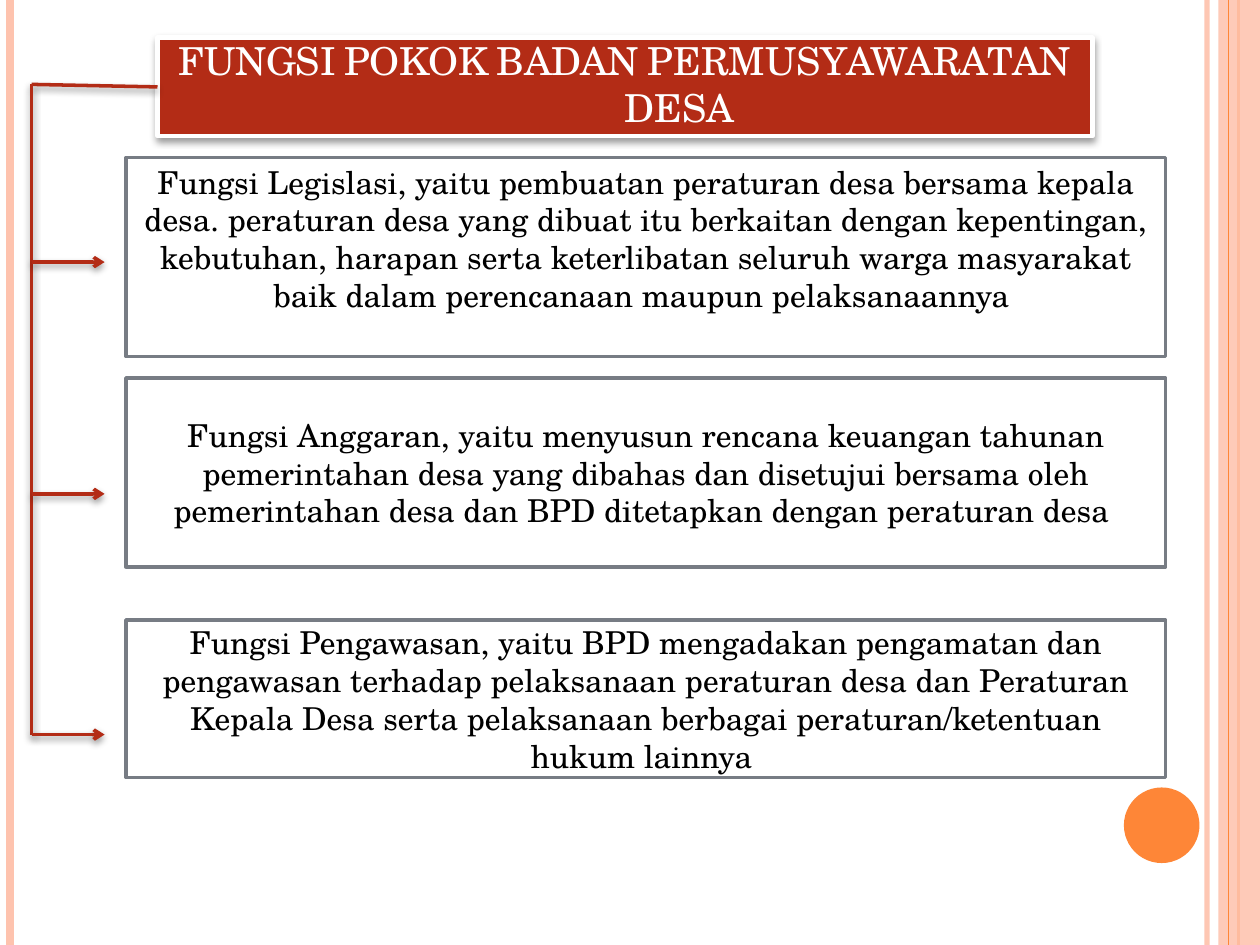
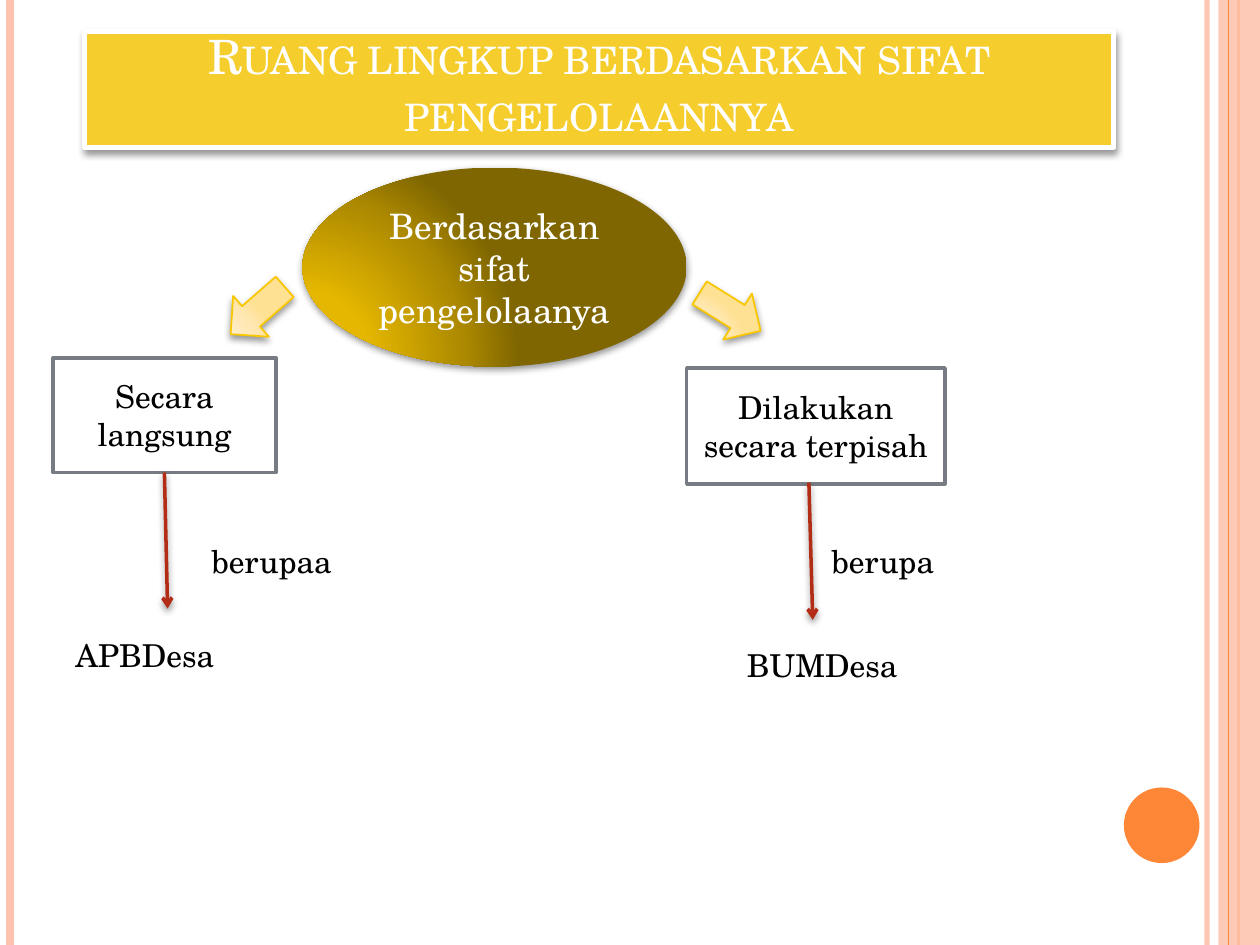
from lxml.etree import SubElement
from pptx import Presentation
from pptx.dml.color import RGBColor
from pptx.enum.shapes import MSO_CONNECTOR, MSO_SHAPE
from pptx.enum.text import MSO_ANCHOR, MSO_AUTO_SIZE, PP_ALIGN
from pptx.oxml.ns import qn
from pptx.util import Emu, Pt

PX = 9144
WIDTH, HEIGHT = 1000, 750
FONT = "TeX Gyre Schola"
WHITE = RGBColor(0xFF, 0xFF, 0xFF)
BLACK = RGBColor(0x00, 0x00, 0x00)
PEACH = RGBColor(0xFE, 0xC3, 0xAE)
ORANGE = RGBColor(0xFE, 0x86, 0x37)
RED = RGBColor(0xB3, 0x2C, 0x16)
YELLOW = RGBColor(0xF5, 0xCD, 0x2D)
GOLD = RGBColor(0xF8, 0xC7, 0x00)
GREY = RGBColor(0x77, 0x7C, 0x84)
OLIVE_GLOW = {0: "EDBE00", 30: "E5B700", 75: "AC8900", 100: "7F6600"}
CREAM_GLOW = {0: "FFF0D1", 30: "FFEFCC", 75: "FFE7B1", 100: "FFE193"}
SHADOW = {"alpha": 40, "blur": 4, "dist": 2}
SOFT_SHADOW = {"alpha": 42, "blur": 4, "dist": 1.6}


def px(*lengths):
    return [Emu(length * PX) for length in lengths]


def assign(target, values):
    for name, value in values.items():
        setattr(target, name, value)


def add(parent, tag, **attributes):
    return SubElement(parent, qn(tag), {k: str(v) for k, v in attributes.items()})


class Deck:
    def __init__(self):
        self.presentation = Presentation()
        assign(self.presentation, {"slide_width": Emu(WIDTH * PX), "slide_height": Emu(HEIGHT * PX)})
        self.layout = self.presentation.slide_layouts[5]
        self.slide = None

    def new_slide(self):
        self.slide = self.presentation.slides.add_slide(self.layout)

    def to_layout(self, *parts):
        for part in parts:
            self.layout.element.cSld.spTree.append(part.element)

    def effect(self, part, shadow=None):
        effects = add(part.element.spPr, "a:effectLst")
        if shadow:
            outer = add(effects, "a:outerShdw", blurRad=Pt(shadow["blur"]),
                        dist=Pt(shadow["dist"]), dir=5400000, rotWithShape=0)
            black = add(outer, "a:srgbClr", val="000000")
            add(black, "a:alpha", val=shadow["alpha"] * 1000)

    def fade(self, part, alpha):
        add(next(part.element.spPr.iter(qn("a:srgbClr"))), "a:alpha", val=alpha * 1000)

    def glow(self, part, stops):
        geometry = part.element.spPr.find(qn("a:prstGeom"))
        gradient = add(part.element.spPr, "a:gradFill", rotWithShape=1)
        stop_list = add(gradient, "a:gsLst")
        for position, color in stops.items():
            add(add(stop_list, "a:gs", pos=position * 1000), "a:srgbClr", val=color)
        circle = add(gradient, "a:path", path="circle")
        add(circle, "a:fillToRect", l=5000, t=100000, r=120000, b=10000)
        geometry.addnext(gradient)

    def line(self, start, end, color=RED, width=2, arrow=False, shadow=SHADOW, origin=None):
        link = self.slide.shapes.add_connector(MSO_CONNECTOR.STRAIGHT, *px(*start, *end))
        link.line.color.rgb = color
        link.line.width = Pt(width)
        if origin:
            link.begin_connect(*origin)
        if arrow:
            add(link.element.spPr.find(qn("a:ln")), "a:tailEnd", type="arrow")
        self.effect(link, shadow)
        return link

    def paint(self, part, fill, outline=None, width=2, shadow=None):
        if isinstance(fill, dict):
            self.glow(part, fill)
        else:
            part.fill.solid()
            part.fill.fore_color.rgb = fill
        if outline is None:
            part.line.fill.background()
        else:
            part.line.color.rgb = outline
            part.line.width = Pt(width)
        self.effect(part, shadow)

    def shape(self, kind, box, fill, **look):
        part = self.slide.shapes.add_shape(kind, *px(*box))
        self.paint(part, fill, **look)
        return part

    def put_text(self, part, text, size=18, color=BLACK, align=PP_ALIGN.CENTER, **frame):
        assign(part.text_frame, {"word_wrap": True, "vertical_anchor": MSO_ANCHOR.MIDDLE, **frame})
        paragraph = part.text_frame.paragraphs[0]
        paragraph.alignment = align
        run = paragraph.add_run()
        run.text = text
        assign(run.font, {"name": FONT, "size": Pt(size)})
        run.font.color.rgb = color

    def title(self, text, box, fill, size):
        heading = self.slide.shapes.title
        assign(heading, dict(zip(("left", "top", "width", "height"), px(*box))))
        self.paint(heading, fill, outline=WHITE, width=2.75, shadow=SHADOW)
        self.put_text(heading, text, size, WHITE, vertical_anchor=MSO_ANCHOR.BOTTOM,
                      auto_size=MSO_AUTO_SIZE.NONE)
        for properties in heading.element.iter(qn("a:rPr")):
            properties.set("cap", "small")
        return heading

    def panel(self, text, box, **frame):
        panel = self.shape(MSO_SHAPE.RECTANGLE, box, WHITE, outline=GREY)
        self.put_text(panel, text, **frame)
        return panel

    def label(self, text, box):
        label = self.slide.shapes.add_textbox(*px(*box))
        self.put_text(label, text, align=PP_ALIGN.LEFT, word_wrap=False,
                      vertical_anchor=MSO_ANCHOR.TOP, auto_size=MSO_AUTO_SIZE.SHAPE_TO_FIT_TEXT)

    def decorate(self):
        def rule(x, color, width):
            return self.line((x, 0), (x, HEIGHT), color, width, shadow=None)

        inner_rule = rule(958, PEACH, 3)
        self.fade(inner_rule, 93)
        left_rule = rule(8, PEACH, 4.5)
        band_rule = rule(983, ORANGE, 1.5)
        band = self.shape(MSO_SHAPE.RECTANGLE, (967, 0, 33, HEIGHT), PEACH)
        self.fade(band, 87)
        thin_rule = rule(975, ORANGE, 0.75)
        disc = self.shape(MSO_SHAPE.OVAL, (892, 625, 60, 60), ORANGE)
        self.to_layout(inner_rule, left_rule, band_rule, band, thin_rule, disc)


def functions_slide(deck):
    heading = deck.title("FUNGSI POKOK BADAN PERMUSYAWARATAN DESA", (125, 30, 742, 78), RED, 22)
    trunk = 25
    deck.line((125, 69), (trunk, 67), origin=(heading, 1))
    deck.line((trunk, 67), (trunk, 583))
    functions = [
        (125, 158, 208, 35, "Fungsi Legislasi, yaitu pembuatan peraturan desa bersama kepala desa. "
         "peraturan desa yang dibuat itu berkaitan dengan kepentingan, kebutuhan, harapan serta "
         "keterlibatan seluruh warga masyarakat baik dalam perencanaan maupun pelaksanaannya "),
        (300, 150, 392, 5, "Fungsi Anggaran, yaitu menyusun rencana keuangan tahunan pemerintahan "
         "desa yang dibahas dan disetujui bersama oleh pemerintahan desa dan BPD ditetapkan "
         "dengan peraturan desa "),
        (492, 125, 583, 5, "Fungsi Pengawasan, yaitu BPD mengadakan pengamatan dan pengawasan "
         "terhadap pelaksanaan peraturan desa dan Peraturan Kepala Desa serta pelaksanaan "
         "berbagai peraturan/ketentuan hukum lainnya "),
    ]
    for top, height, branch, inset, text in functions:
        deck.line((trunk, branch), (83, branch), arrow=True)
        deck.panel(text, (100, top, 825, height), margin_bottom=Emu(inset * PX))


def scope_slide(deck):
    deck.title("Ruang lingkup berdasarkan sifat pengelolaannya", (67, 25, 817, 92), YELLOW, 27)
    basis = deck.shape(MSO_SHAPE.OVAL, (240, 133, 305, 158), OLIVE_GLOW, shadow=SOFT_SHADOW)
    deck.put_text(basis, "Berdasarkan sifat pengelolaanya", 20, WHITE)
    for left, top, angle in ((183, 218, 48.8), (558, 219, 301.8)):
        pointer = deck.shape(MSO_SHAPE.DOWN_ARROW, (left, top, 43, 57), CREAM_GLOW,
                             outline=GOLD, width=1, shadow=SHADOW)
        pointer.rotation = angle
    direct = deck.panel("Secara langsung", (42, 284, 177, 91))
    deck.panel("Dilakukan secara terpisah", (545, 292, 205, 92))
    deck.line((130, 375), (133, 483), arrow=True, origin=(direct, 2))
    deck.line((642, 383), (645, 492), arrow=True)
    deck.label("berupaa", (158, 425, 116, 40))
    deck.label("APBDesa", (50, 500, 132, 40))
    deck.label("berupa", (650, 425, 102, 40))
    deck.label("BUMDesa", (583, 508, 141, 40))


def main():
    deck = Deck()
    deck.new_slide()
    deck.decorate()
    functions_slide(deck)
    deck.new_slide()
    scope_slide(deck)
    deck.presentation.save("out.pptx")


if __name__ == "__main__":
    main()
